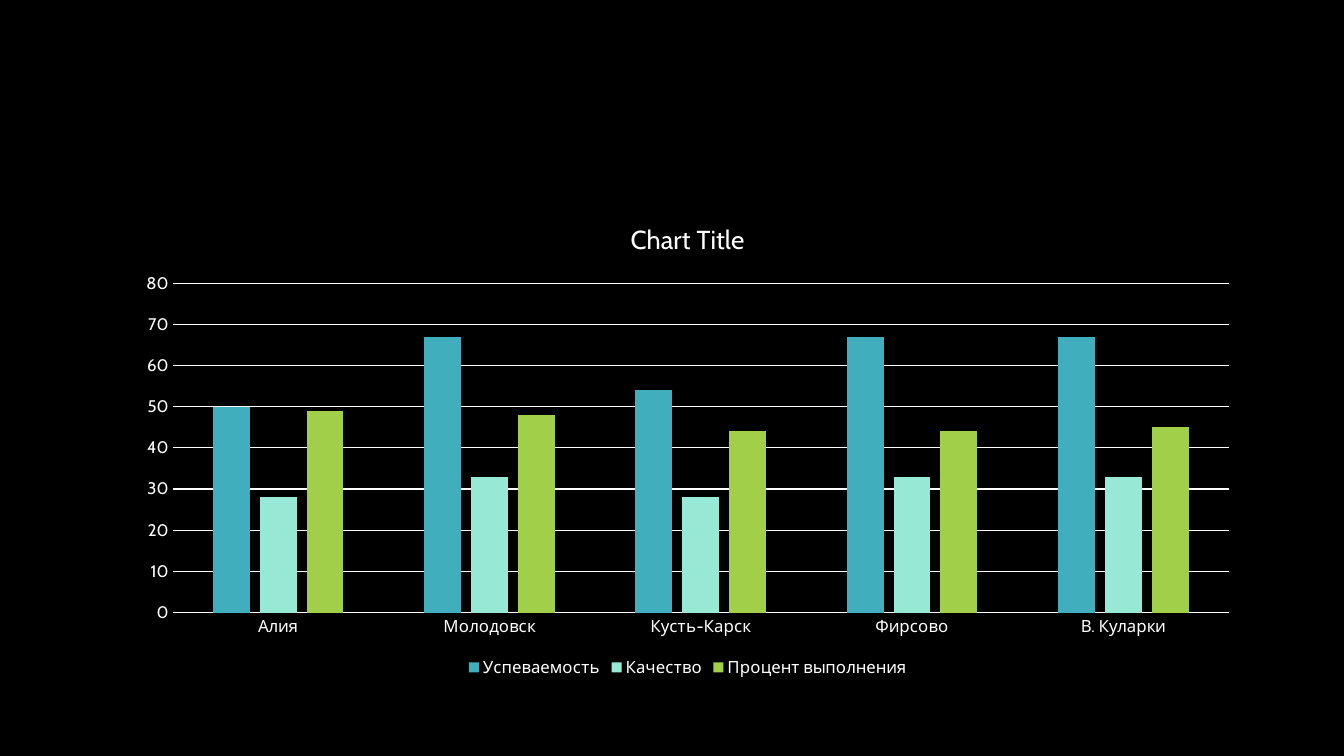
from dataclasses import dataclass

from pptx import Presentation
from pptx.chart.chart import Chart
from pptx.chart.data import CategoryChartData
from pptx.dml.color import RGBColor
from pptx.dml.line import LineFormat
from pptx.enum.chart import XL_CHART_TYPE, XL_LEGEND_POSITION, XL_TICK_MARK
from pptx.slide import Slide
from pptx.text.text import Font
from pptx.util import Cm, Pt


@dataclass(frozen=True)
class Theme:
    background: RGBColor = RGBColor(0x00, 0x00, 0x00)
    foreground: RGBColor = RGBColor(0xFF, 0xFF, 0xFF)
    font_name: str = "Cabin"
    base_size: float = 10
    label_size: float = 12
    title_size: float = 18.6
    line_width: float = 0.75


@dataclass(frozen=True)
class ResultSeries:
    name: str
    values: tuple[int, ...]
    color: RGBColor


THEME = Theme()
SCHOOLS = ("Алия", "Молодовск", "Кусть-Карск", "Фирсово", "В. Куларки")
RESULTS = (
    ResultSeries("Успеваемость", (50, 67, 54, 67, 67), RGBColor(0x41, 0xAE, 0xBD)),
    ResultSeries("Качество", (28, 33, 28, 33, 33), RGBColor(0x97, 0xE9, 0xD5)),
    ResultSeries("Процент выполнения", (49, 48, 44, 44, 45), RGBColor(0xA2, 0xCF, 0x49)),
)


def style_font(font: Font, size: float) -> None:
    font.name = THEME.font_name
    font.size = Pt(size)
    font.bold = False
    font.color.rgb = THEME.foreground


def style_line(line: LineFormat) -> None:
    line.color.rgb = THEME.foreground
    line.width = Pt(THEME.line_width)


def add_results_chart(slide: Slide) -> Chart:
    chart_data = CategoryChartData()
    chart_data.categories = SCHOOLS
    for result in RESULTS:
        chart_data.add_series(result.name, result.values)
    frame = slide.shapes.add_chart(
        XL_CHART_TYPE.COLUMN_CLUSTERED, Cm(3.12), Cm(5.08), Cm(28.42), Cm(12.09), chart_data
    )
    return frame.chart


def style_columns(chart: Chart) -> None:
    plot = chart.plots[0]
    plot.vary_by_categories = False
    plot.gap_width = 219
    plot.overlap = -27
    for series, result in zip(plot.series, RESULTS):
        series.format.fill.solid()
        series.format.fill.fore_color.rgb = result.color
        series.invert_if_negative = False


def style_axes(chart: Chart) -> None:
    for axis in (chart.category_axis, chart.value_axis):
        axis.major_tick_mark = XL_TICK_MARK.NONE
        axis.minor_tick_mark = XL_TICK_MARK.NONE
        style_font(axis.tick_labels.font, THEME.label_size)
    style_line(chart.category_axis.format.line)

    value_axis = chart.value_axis
    value_axis.minimum_scale = 0
    value_axis.maximum_scale = 80
    value_axis.major_unit = 10
    value_axis.has_major_gridlines = True
    style_line(value_axis.major_gridlines.format.line)
    value_axis.format.line.fill.background()


def style_title_and_legend(chart: Chart) -> None:
    chart.has_title = True
    title = chart.chart_title
    title.include_in_layout = False
    title.text_frame.text = "Chart Title"
    style_font(title.text_frame.paragraphs[0].runs[0].font, THEME.title_size)

    chart.has_legend = True
    chart.legend.position = XL_LEGEND_POSITION.BOTTOM
    chart.legend.include_in_layout = False
    style_font(chart.legend.font, THEME.label_size)


def main() -> None:
    presentation = Presentation()
    presentation.slide_width = Cm(33.87)
    presentation.slide_height = Cm(19.05)
    slide = presentation.slides.add_slide(presentation.slide_layouts[6])

    # Background
    slide.background.fill.solid()
    slide.background.fill.fore_color.rgb = THEME.background

    # Chart of school results
    chart = add_results_chart(slide)
    style_font(chart.font, THEME.base_size)
    style_columns(chart)
    style_axes(chart)
    style_title_and_legend(chart)

    presentation.save("out.pptx")


if __name__ == "__main__":
    main()
